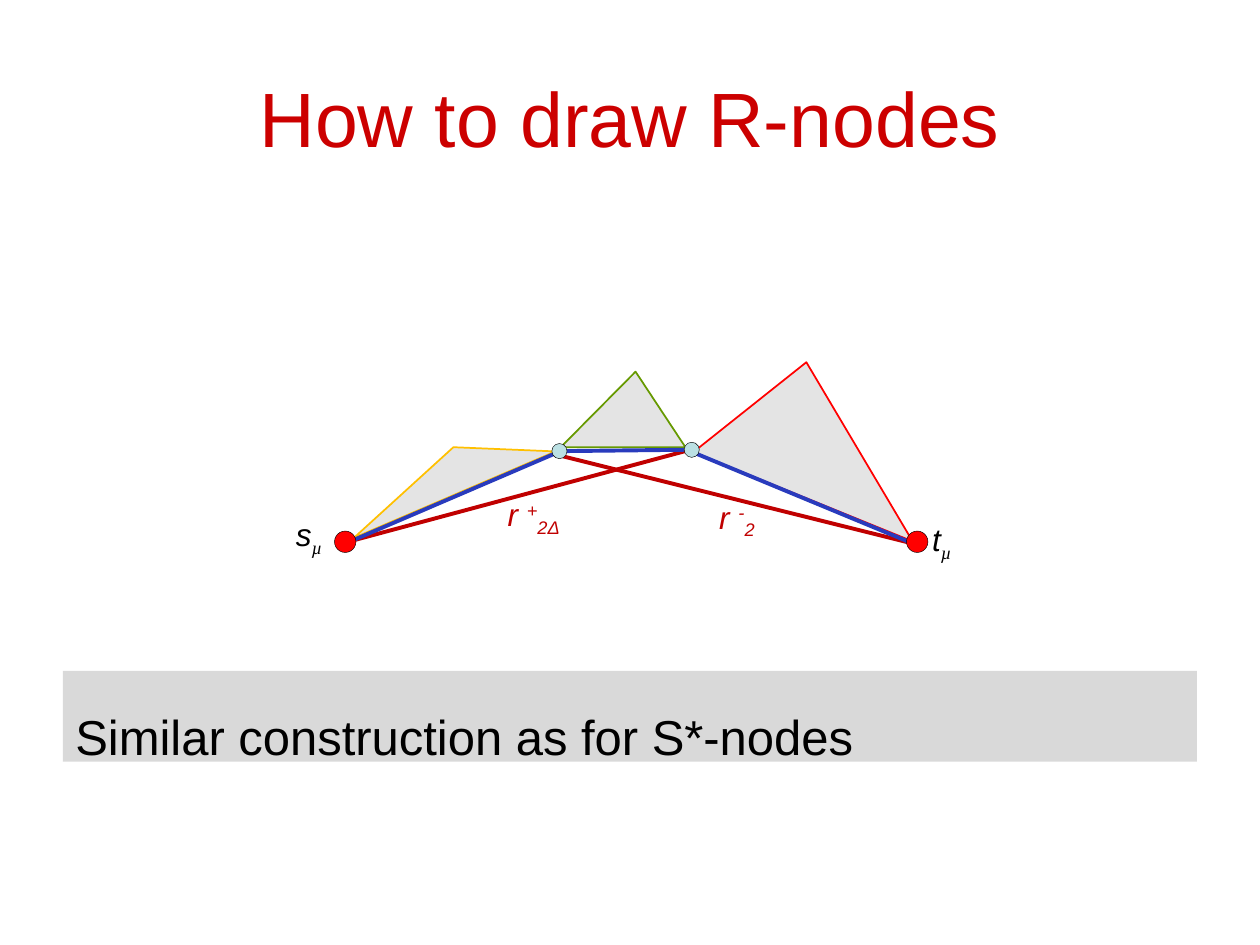
import dataclasses

import lxml.etree
import pptx
import pptx.dml.color
import pptx.enum.shapes
import pptx.enum.text
import pptx.oxml.ns
import pptx.util

Inches = pptx.util.Inches
Pt = pptx.util.Pt
SHAPES = pptx.enum.shapes.MSO_SHAPE
ANCHORS = pptx.enum.text.MSO_ANCHOR
ALIGNMENTS = pptx.enum.text.PP_ALIGN
AUTO_SIZES = pptx.enum.text.MSO_AUTO_SIZE

WIDTH, HEIGHT = 10, 7.5
MARGIN = 0.05 * WIDTH
CONTENT_WIDTH = WIDTH - 2 * MARGIN


@dataclasses.dataclass(frozen=True)
class Theme:
    font: str = "Arial"
    greek_font: str = "Times New Roman"
    title: str = "CC0000"
    text: str = "000000"
    band: str = "D9D9D9"
    face: str = "A6A6A6"
    face_opacity: int = 30
    left_face_line: str = "FFC000"
    middle_face_line: str = "669900"
    right_face_line: str = "FF0000"
    pole: str = "FF0000"
    inner_node: str = "BBE0E3"
    spine: str = "293BBD"
    bound: str = "C00000"
    title_size: float = 44
    band_size: float = 28
    label_size: float = 18
    edge_width: float = 2.25
    face_width: float = 1
    node_width: float = 0.25


THEME = Theme()


def rgb(value):
    return pptx.dml.color.RGBColor.from_string(value)


def add_element(parent, tag):
    return lxml.etree.SubElement(parent, pptx.oxml.ns.qn(tag))


def add_run(paragraph, text, size, color, font=THEME.font, italic=False, baseline=0):
    """Baseline is a shift in percent: above zero raises, below zero lowers."""
    run = paragraph.add_run()
    run.text = text
    run.font.name = font
    run.font.size = Pt(size)
    run.font.italic = italic
    run.font.color.rgb = rgb(color)
    if baseline:
        run.font._element.set("baseline", str(baseline * 1000))


def add_title(slide, text):
    title = slide.shapes.title
    title.left, title.top = Inches(MARGIN), Inches(0.04 * HEIGHT)
    title.width, title.height = Inches(CONTENT_WIDTH), Inches(HEIGHT / 6)
    title.text_frame.vertical_anchor = ANCHORS.MIDDLE
    paragraph = title.text_frame.paragraphs[0]
    paragraph.alignment = ALIGNMENTS.CENTER
    add_run(paragraph, text, THEME.title_size, THEME.title)


def add_filled_shape(slide, kind, box, fill, line=None, line_width=1):
    shape = slide.shapes.add_shape(kind, *map(Inches, box))
    shape.shadow.inherit = False
    shape.fill.solid()
    shape.fill.fore_color.rgb = rgb(fill)
    if line:
        shape.line.color.rgb = rgb(line)
        shape.line.width = Pt(line_width)
    else:
        shape.line.fill.background()
    return shape


def add_face(slide, box, apex, line, rotation=0):
    """Translucent triangle; apex is its place along the base, from 0 to 1."""
    face = add_filled_shape(
        slide, SHAPES.ISOSCELES_TRIANGLE, box, THEME.face, line, THEME.face_width
    )
    face.adjustments[0] = apex
    face.rotation = rotation
    color = face._element.spPr.find(".//" + pptx.oxml.ns.qn("a:srgbClr"))
    add_element(color, "a:alpha").set("val", str(THEME.face_opacity * 1000))


def add_edge(slide, start, end, color):
    edge = slide.shapes.add_connector(
        pptx.enum.shapes.MSO_CONNECTOR.STRAIGHT, *map(Inches, start + end)
    )
    edge.line.color.rgb = rgb(color)
    edge.line.width = Pt(THEME.edge_width)
    add_element(edge._element.spPr, "a:effectLst")


def add_node(slide, center, diameter, fill):
    left, top = (value - diameter / 2 for value in center)
    box = (left, top, diameter, diameter)
    add_filled_shape(slide, SHAPES.OVAL, box, fill, THEME.text, THEME.node_width)


def add_label(slide, box, color, parts):
    """Each part is its text, baseline shift and font."""
    label = slide.shapes.add_textbox(*map(Inches, box))
    label.text_frame.word_wrap = False
    label.text_frame.auto_size = AUTO_SIZES.SHAPE_TO_FIT_TEXT
    paragraph = label.text_frame.paragraphs[0]
    for text, baseline, font in parts:
        add_run(paragraph, text, THEME.label_size, color, font, True, baseline)


def add_pole_label(slide, box, name):
    parts = [(name, 0, THEME.font), ("µ", -25, THEME.greek_font)]
    add_label(slide, box, THEME.text, parts)


def add_bound_label(slide, box, sign, index):
    parts = [(text, baseline, THEME.font)
             for text, baseline in (("r ", 0), (sign, 30), (index, -25))]
    add_label(slide, box, THEME.bound, parts)


def add_band(slide, text):
    box = (MARGIN, 0.71 * HEIGHT, CONTENT_WIDTH, 0.72)
    band = add_filled_shape(slide, SHAPES.RECTANGLE, box, THEME.band)
    frame = band.text_frame
    frame.word_wrap = True
    frame.vertical_anchor = ANCHORS.TOP
    frame.auto_size = AUTO_SIZES.SHAPE_TO_FIT_TEXT
    paragraph = frame.paragraphs[0]
    paragraph.alignment = ALIGNMENTS.LEFT
    paragraph.line_spacing = 1.5
    add_run(paragraph, text, THEME.band_size, THEME.text)


def add_drawing(slide):
    add_face(slide, (2.67, 3.59, 1.74, 0.35), 0.58, THEME.left_face_line, 336.8)
    add_edge(slide, (5.44, 3.58), (2.8, 4.29), THEME.bound)
    add_edge(slide, (4.45, 3.58), (2.75, 4.31), THEME.spine)
    add_face(slide, (5.62, 2.98, 1.88, 1), 0.3, THEME.right_face_line, 22.1)
    add_face(slide, (4.45, 2.95, 0.99, 0.6), 0.6, THEME.middle_face_line)
    add_edge(slide, (4.46, 3.62), (7.23, 4.31), THEME.bound)
    add_edge(slide, (5.5, 3.59), (7.26, 4.32), THEME.spine)
    add_edge(slide, (4.5, 3.58), (5.43, 3.57), THEME.spine)

    for center in ((2.74, 4.3), (7.28, 4.3)):
        add_node(slide, center, 0.17, THEME.pole)
    for center in ((4.44, 3.58), (5.49, 3.57)):
        add_node(slide, center, 0.12, THEME.inner_node)

    add_pole_label(slide, (2.25, 4.04, 0.42, 0.4), "s")
    add_pole_label(slide, (7.3, 4.08, 0.37, 0.4), "t")
    add_bound_label(slide, (3.93, 3.88, 0.66, 0.4), "+", "2Δ")
    add_bound_label(slide, (5.61, 3.9, 0.51, 0.4), "-", "2")


def main():
    presentation = pptx.Presentation()
    presentation.slide_width = Inches(WIDTH)
    presentation.slide_height = Inches(HEIGHT)
    title_only = presentation.slide_layouts.get_by_name("Title Only")
    slide = presentation.slides.add_slide(title_only)
    add_title(slide, "How to draw R-nodes")
    add_drawing(slide)
    add_band(slide, "Similar construction as for S*-nodes")
    presentation.save("out.pptx")


if __name__ == "__main__":
    main()
